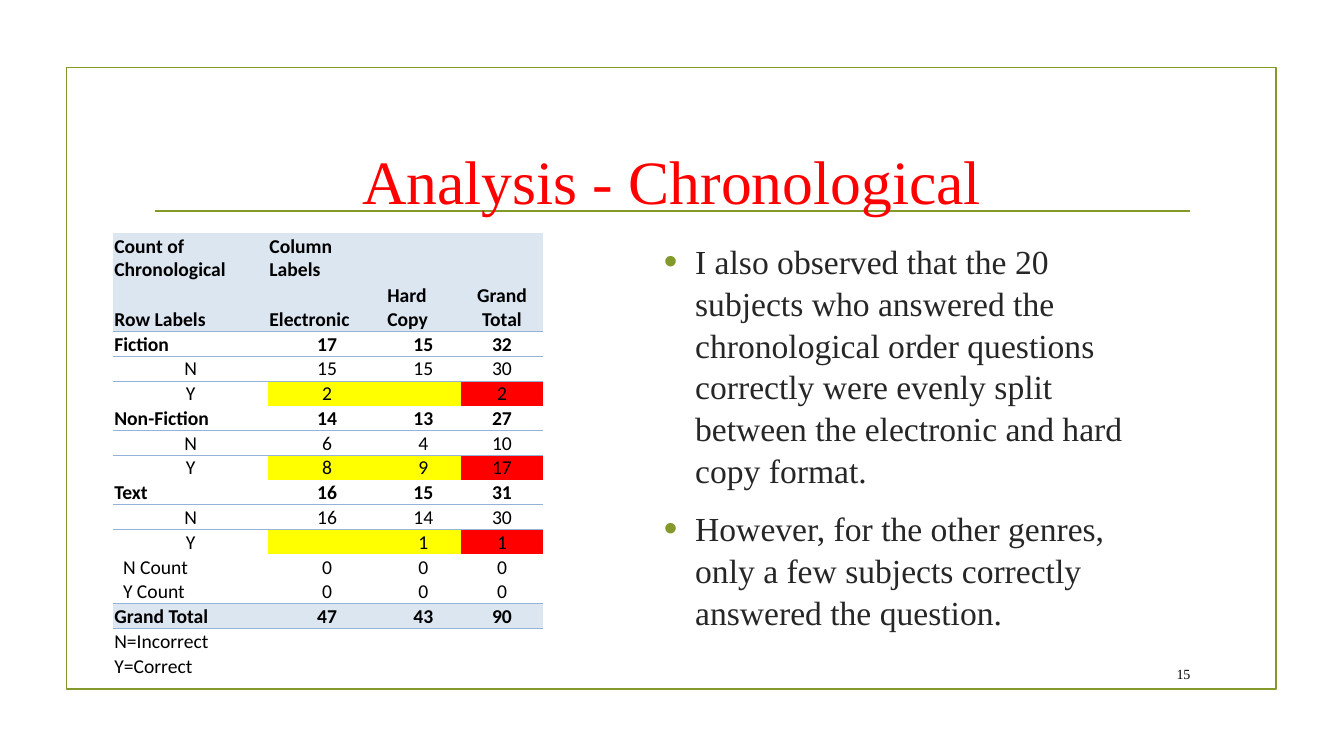
from lxml import etree
from pptx import Presentation
from pptx import util as u
from pptx.dml.color import RGBColor
from pptx.enum import shapes, text
from pptx.oxml.ns import qn

COLORS = {
    "green": "83992A", "red": "FF0000", "yellow": "FFFF00", "black": "000000",
    "body": "262626", "band": "DCE6F1", "rule": "95B3D7",
}
NO_STYLE = "{2D5ABB26-0587-4C30-8999-92F81FD0307C}"
LEFT, CENTER, RIGHT = text.PP_ALIGN.LEFT, text.PP_ALIGN.CENTER, text.PP_ALIGN.RIGHT
MIDDLE, TOP = text.MSO_ANCHOR.MIDDLE, text.MSO_ANCHOR.TOP

COUNTS = [
    ["Count of Chronological", "Column Labels", "", ""],
    ["Row Labels", "Electronic", "Hard Copy", "Grand Total"],
    ["Fiction", "17", "15", "32"],
    ["N", "15", "15", "30"],
    ["Y", "2", "", "2"],
    ["Non-Fiction", "14", "13", "27"],
    ["N", "6", "4", "10"],
    ["Y", "8", "9", "17"],
    ["Text", "16", "15", "31"],
    ["N", "16", "14", "30"],
    ["Y", "", "1", "1"],
    ["N Count", "0", "0", "0"],
    ["Y Count", "0", "0", "0"],
    ["Grand Total", "47", "43", "90"],
    ["N=Incorrect", "", "", ""],
    ["Y=Correct", "", "", ""],
]
COLUMN_WIDTHS = [3.91, 2.97, 1.88, 2.08]
HEADER_ROWS = (0, 1)
BOLD_ROWS = (0, 1, 2, 5, 8, 13)
BAND_ROWS = (0, 1, 13)
RULED_ROWS = (1, 2, 5, 8, 12)
FINDINGS = [
    "I also observed that the 20 subjects who answered the chronological order "
    "questions correctly were evenly split between the electronic and hard copy format.",
    "However, for the other genres, only a few subjects correctly answered the question.",
]


def rgb(name):
    return RGBColor.from_string(COLORS[name])


def add_xml(parent, tag, **attrs):
    return etree.SubElement(parent, qn(tag), **attrs)


class SlideBuilder:
    font = "Times New Roman"
    table_font = "Calibri"
    table_size = 14
    line_width = 1.25

    def __init__(self, slide):
        self.slide = slide

    def style_line(self, line):
        line.color.rgb = rgb("green")
        line.width = u.Pt(self.line_width)

    def style_runs(self, p, font, size, color, bold=False):
        for r in p.runs:
            r.font.name = font
            r.font.size = u.Pt(size)
            r.font.bold = bold
            r.font.color.rgb = rgb(color)

    def frame(self, x, y, w, h):
        sp = self.slide.shapes.add_shape(
            shapes.MSO_SHAPE.RECTANGLE, u.Cm(x), u.Cm(y), u.Cm(w), u.Cm(h))
        sp.shadow.inherit = False
        sp.fill.background()
        self.style_line(sp.line)

    def rule(self, x1, x2, y):
        line = self.slide.shapes.add_connector(
            shapes.MSO_CONNECTOR.STRAIGHT, u.Cm(x1), u.Cm(y), u.Cm(x2), u.Cm(y))
        self.style_line(line.line)
        add_xml(line._element.spPr, "a:effectLst")

    def text_box(self, x, y, w, h, paragraphs, size, color,
                 align=LEFT, anchor=MIDDLE):
        sp = self.slide.shapes.add_textbox(u.Cm(x), u.Cm(y), u.Cm(w), u.Cm(h))
        tf = sp.text_frame
        tf.word_wrap = True
        tf.vertical_anchor = anchor
        tf.text = "\n".join(paragraphs)
        for p in tf.paragraphs:
            p.alignment = align
            self.style_runs(p, self.font, size, color)
        return tf

    def bullets(self, x, y, w, h, items, size):
        tf = self.text_box(x, y, w, h, items, size, "body", anchor=TOP)
        for i, p in enumerate(tf.paragraphs):
            pPr = p._p.get_or_add_pPr()
            pPr.set("marL", str(u.Cm(0.79)))
            pPr.set("indent", str(u.Cm(-0.79)))
            add_xml(add_xml(pPr, "a:buClr"), "a:srgbClr", val=COLORS["green"])
            add_xml(pPr, "a:buSzPct", val="115000")
            add_xml(pPr, "a:buFont", typeface="Arial")
            add_xml(pPr, "a:buChar", char="•")
            p.line_spacing = 1.04
            p.space_after = u.Pt(6)
            if i:
                p.space_before = u.Pt(5.4)

    def border(self, cell, side):
        ln = add_xml(cell._tc.get_or_add_tcPr(), side, w=str(u.Pt(0.5)))
        add_xml(add_xml(ln, "a:solidFill"), "a:srgbClr", val=COLORS["rule"])

    def cell(self, cell, value, row, col):
        cell.margin_left = u.Cm(0.25 if value.endswith(" Count") else 0.03)
        cell.margin_right = cell.margin_top = u.Cm(0.03)
        cell.margin_bottom = 0
        cell.vertical_anchor = text.MSO_ANCHOR.BOTTOM
        cell.text = value
        p = cell.text_frame.paragraphs[0]
        centered = value in ("N", "Y") or col == 3 or (col and row not in HEADER_ROWS)
        p.alignment = CENTER if centered else LEFT
        self.style_runs(p, self.table_font, self.table_size, "black", row in BOLD_ROWS)
        if not value:
            add_xml(p._p, "a:endParaRPr", sz=str(self.table_size * 100))
        if row - 1 in RULED_ROWS:
            self.border(cell, "a:lnT")
        if row in RULED_ROWS:
            self.border(cell, "a:lnB")
        if row in BAND_ROWS:
            fill = "band"
        elif COUNTS[row][0] == "Y" and col:
            fill = "red" if col == 3 else "yellow"
        else:
            cell.fill.background()
            return
        cell.fill.solid()
        cell.fill.fore_color.rgb = rgb(fill)

    def table(self, x, y, widths, rows, row_height):
        heights = [row_height * (2 if i in HEADER_ROWS else 1) for i in range(len(rows))]
        tbl = self.slide.shapes.add_table(
            len(rows), len(widths), u.Cm(x), u.Cm(y),
            u.Cm(sum(widths)), u.Cm(sum(heights))).table
        tbl._tbl.tblPr.find(qn("a:tableStyleId")).text = NO_STYLE
        tbl.first_row = tbl.horz_banding = False
        for column, width in zip(tbl.columns, widths):
            column.width = u.Cm(width)
        for i, values in enumerate(rows):
            tbl.rows[i].height = u.Cm(heights[i])
            for j, value in enumerate(values):
                self.cell(tbl.cell(i, j), value, i, j)


def main():
    prs = Presentation()
    prs.slide_width, prs.slide_height = u.Cm(33.87), u.Cm(19.05)
    s = SlideBuilder(prs.slides.add_slide(prs.slide_layouts[6]))
    s.frame(1.68, 1.7, 30.48, 15.67)
    s.rule(3.9, 30, 5.32)
    s.text_box(3.6, 2.72, 26.67, 3.63, ["Analysis - Chronological"], 44, "red", CENTER)
    s.bullets(16.48, 5.9, 13.11, 11.2, FINDINGS, 24)
    s.text_box(28.75, 16.59, 1.5, 0.79, ["15"], 10, "black", RIGHT)
    s.table(2.85, 5.87, COLUMN_WIDTHS, COUNTS, 0.62)
    prs.save("out.pptx")


if __name__ == "__main__":
    main()
